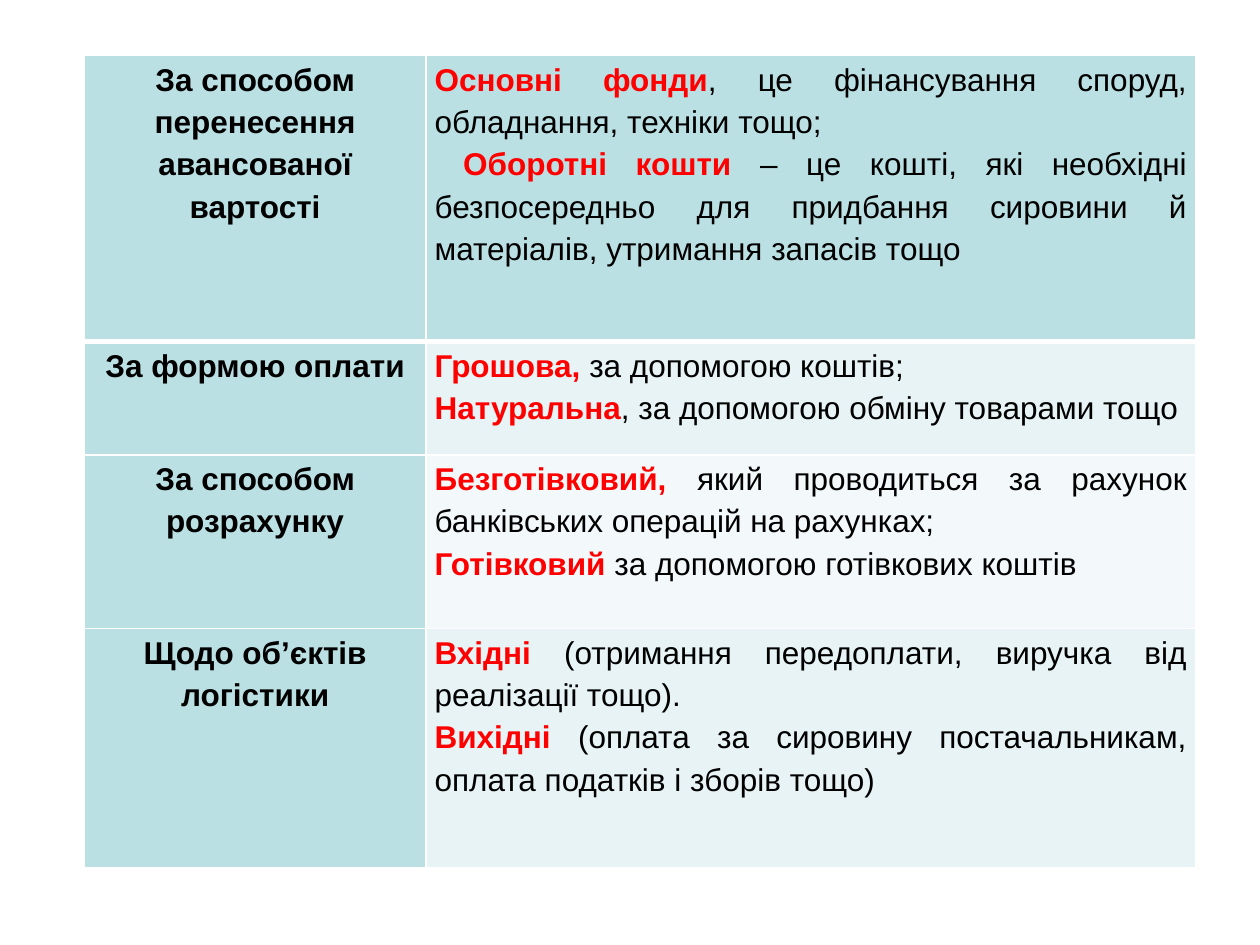
"""Build a slide with a table that classifies financial flows."""
from dataclasses import dataclass

from lxml import etree
from pptx import Presentation
from pptx.dml.color import RGBColor
from pptx.enum.text import PP_ALIGN
from pptx.oxml.ns import qn
from pptx.util import Inches, Pt

CENTER, JUSTIFY = PP_ALIGN.CENTER, PP_ALIGN.JUSTIFY


@dataclass(frozen=True)
class Theme:
    font: str = "Arial"
    size: float = 18
    space: float = 1.2
    text: str = "000000"
    term: str = "FF0000"
    head: str = "BBE0E3"
    odd: str = "E7F3F4"
    even: str = "F3F9FA"
    edge: str = "FFFFFF"
    thin: float = 1
    thick: float = 3
    inset: float = 0.07


@dataclass(frozen=True)
class Item:
    term: str
    note: str


@dataclass(frozen=True)
class Group:
    name: str
    high: float
    fill: str
    items: tuple[Item, ...]


THEME = Theme()
LEFT, TOP = 0.67, 0.44
COLS = (2.71, 6.11)
GROUPS = (
    Group("За способом перенесення авансованої вартості", 2.27, THEME.head, (
        Item("Основні фонди", ", це фінансування споруд, обладнання, техніки тощо;"),
        Item(" Оборотні кошти ", "– це кошті, які необхідні безпосередньо для придбання "
             "сировини й матеріалів, утримання запасів тощо"))),
    Group("За формою оплати", 0.9, THEME.odd, (
        Item("Грошова, ", "за допомогою коштів;"),
        Item("Натуральна", ", за допомогою обміну товарами тощо"))),
    Group("За способом розрахунку", 1.38, THEME.even, (
        Item("Безготівковий, ", "який проводиться за рахунок банківських операцій на рахунках;"),
        Item("Готівковий", " за допомогою готівкових коштів"))),
    Group("Щодо об’єктів логістики", 1.9, THEME.odd, (
        Item("Вхідні", " (отримання передоплати, виручка від реалізації тощо)."),
        Item("Вихідні", " (оплата за сировину постачальникам, оплата податків і зборів тощо)"))),
)


def add_edge(cell, side: str, width: float) -> None:
    line = etree.SubElement(cell._tc.get_or_add_tcPr(), qn(f"a:ln{side}"), w=str(Pt(width)))
    fill = etree.SubElement(line, qn("a:solidFill"))
    etree.SubElement(fill, qn("a:srgbClr"), val=THEME.edge)


def style_cell(cell, fill: str, top: float, base: float) -> None:
    for side, width in zip("LRTB", (THEME.thin, THEME.thin, top, base)):
        add_edge(cell, side, width)
    cell.fill.solid()
    cell.fill.fore_color.rgb = RGBColor.from_string(fill)
    cell.margin_left = cell.margin_right = Inches(THEME.inset)
    cell.margin_top = cell.margin_bottom = 0


def add_run(para, text: str, color: str, bold: bool) -> None:
    run = para.add_run()
    run.text = text
    run.font.name = THEME.font
    run.font.size = Pt(THEME.size)
    run.font.bold = bold
    run.font.color.rgb = RGBColor.from_string(color)


def set_para(para, align: PP_ALIGN) -> None:
    para.alignment = align
    para.line_spacing = THEME.space


def fill_row(cells: tuple, group: Group, top: float, base: float) -> None:
    name, body = cells
    style_cell(name, THEME.head, top, base)
    style_cell(body, group.fill, top, base)
    para = name.text_frame.paragraphs[0]
    set_para(para, CENTER)
    add_run(para, group.name, THEME.text, True)
    frame = body.text_frame
    for i, item in enumerate(group.items):
        para = frame.add_paragraph() if i else frame.paragraphs[0]
        set_para(para, JUSTIFY)
        add_run(para, item.term, THEME.term, True)
        add_run(para, item.note, THEME.text, False)


def add_table(slide) -> None:
    high = sum(group.high for group in GROUPS)
    table = slide.shapes.add_table(
        len(GROUPS), len(COLS), Inches(LEFT), Inches(TOP),
        Inches(sum(COLS)), Inches(high)).table
    for col, width in zip(table.columns, COLS):
        col.width = Inches(width)
    for i, group in enumerate(GROUPS):
        table.rows[i].height = Inches(group.high)
        top = THEME.thick if i == 1 else THEME.thin
        base = THEME.thick if i == 0 else THEME.thin
        fill_row((table.cell(i, 0), table.cell(i, 1)), group, top, base)


def main() -> None:
    deck = Presentation()
    deck.slide_width, deck.slide_height = Inches(10), Inches(7.5)
    add_table(deck.slides.add_slide(deck.slide_layouts[6]))
    deck.save("out.pptx")


if __name__ == "__main__":
    main()
